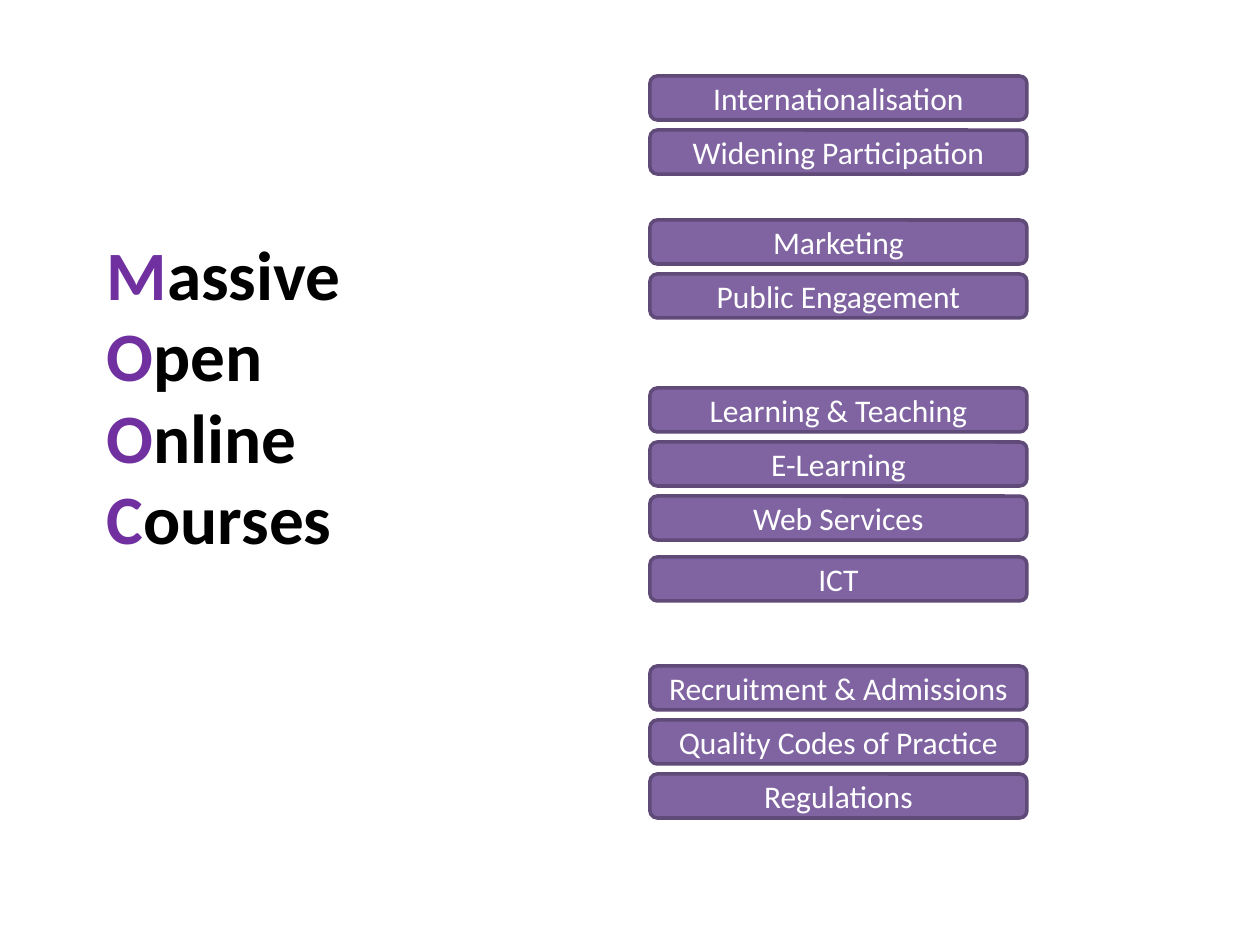
"""Build the slide that sets Massive Open Online Courses beside related university areas."""
from pptx import Presentation
from pptx.dml.color import RGBColor
from pptx.enum.shapes import MSO_SHAPE
from pptx.enum.text import MSO_ANCHOR, MSO_AUTO_SIZE, PP_ALIGN
from pptx.util import Inches, Pt

PX = Inches(1) // 126
ROUNDED = MSO_SHAPE.ROUNDED_RECTANGLE
MIDDLE = MSO_ANCHOR.MIDDLE
NO_AUTOFIT = MSO_AUTO_SIZE.NONE
LEFT, CENTER = PP_ALIGN.LEFT, PP_ALIGN.CENTER

INITIAL = RGBColor(0x70, 0x30, 0xA0)
BLACK = RGBColor(0x00, 0x00, 0x00)
WHITE = RGBColor(0xFF, 0xFF, 0xFF)
PURPLE = RGBColor(0x80, 0x64, 0xA2)
DARK_PURPLE = RGBColor(0x5F, 0x4A, 0x78)

AREA_LEFT, AREA_WIDTH, AREA_HEIGHT, AREA_PITCH = 650, 377, 44, 54
AREA_GROUPS = [
    (76, ["Internationalisation", "Widening Participation"]),
    (220, ["Marketing", "Public Engagement"]),
    (388, ["Learning & Teaching", "E-Learning", "Web Services"]),
    (557, ["ICT"]),
    (666, ["Recruitment & Admissions", "Quality Codes of Practice", "Regulations"]),
]


def add_run(paragraph, text, size, color, bold=False):
    run = paragraph.add_run()
    run.text = text
    run.font.name = "Calibri"
    run.font.size = Pt(size)
    run.font.bold = bold
    run.font.color.rgb = color


prs = Presentation()
prs.slide_width = Inches(10)
prs.slide_height = Inches(7.5)
slide = prs.slides.add_slide(prs.slide_layouts[0])
subtitle = slide.placeholders[1].element
subtitle.getparent().remove(subtitle)

mooc = slide.shapes.title
mooc.left, mooc.top, mooc.width, mooc.height = 94 * PX, 224 * PX, 297 * PX, 348 * PX
mooc.text_frame.auto_size = NO_AUTOFIT
mooc.text_frame.word_wrap = True
mooc.text_frame.vertical_anchor = MIDDLE
words = mooc.text_frame.paragraphs[0]
words.alignment = LEFT
words.line_spacing = 0.98
for index, word in enumerate(["Massive", "Open", "Online", "Courses"]):
    if index:
        words.add_line_break()
    add_run(words, word[0], 39.6, INITIAL, bold=True)
    add_run(words, word[1:], 39.6, BLACK, bold=True)

for group_top, areas in AREA_GROUPS:
    for row, area_name in enumerate(areas):
        area = slide.shapes.add_shape(
            ROUNDED, AREA_LEFT * PX, (group_top + row * AREA_PITCH) * PX,
            AREA_WIDTH * PX, AREA_HEIGHT * PX)
        area.shadow.inherit = False
        area.fill.solid()
        area.fill.fore_color.rgb = PURPLE
        area.line.color.rgb = DARK_PURPLE
        area.line.width = Pt(2)
        area.text_frame.word_wrap = True
        area.text_frame.vertical_anchor = MIDDLE
        label = area.text_frame.paragraphs[0]
        label.alignment = CENTER
        add_run(label, area_name, 18, WHITE)

prs.save("out.pptx")
